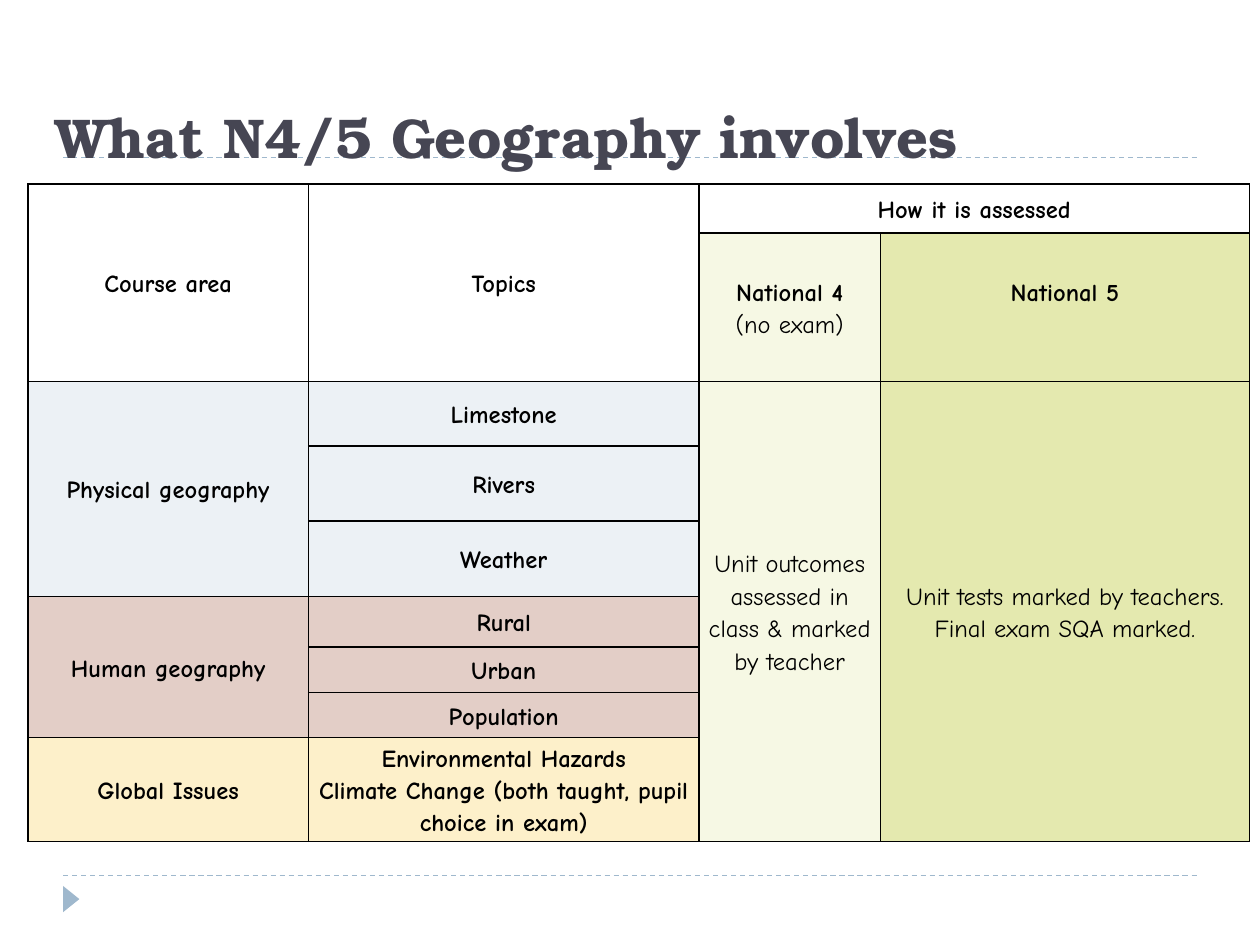
from lxml import etree
from pptx import Presentation
from pptx import util as u
from pptx.dml.color import RGBColor
from pptx.enum import dml, shapes, text
from pptx.oxml import ns

COLOURS = {
    "title": "464653", "text": "000000", "border": "000000", "accent": "9FB8CD",
    "header": "FFFFFF", "national 4": "F6F8E4", "national 5": "E4E9AF",
    "physical": "ECF1F5", "human": "E3CEC7", "global": "FDF0CA",
}
TITLE_FONT = {"name": "TeX Gyre Bonum", "size": u.Pt(32), "bold": True}
CELL_FONT = {"name": "Comic Neue", "size": u.Pt(14)}
CELL_FORMAT = {
    "vertical_anchor": text.MSO_ANCHOR.MIDDLE,
    "margin_left": u.Cm(0.18), "margin_right": u.Cm(0.18),
    "margin_top": 0, "margin_bottom": 0,
}
PARAGRAPH_FORMAT = {"alignment": text.PP_ALIGN.CENTER, "line_spacing": 1.15}

COLUMN_WIDTHS = [5.66, 7.87, 3.66, 7.44]
ROW_HEIGHTS = [0.99, 2.99, 1.3, 1.51, 1.52, 1.02, 0.92, 0.91, 2.09]

# Row, column, row span, column span, colour, [(paragraph, bold), ...]
CELLS = [
    (0, 0, 2, 1, "header", [("Course area", True)]),
    (0, 1, 2, 1, "header", [("Topics", True)]),
    (0, 2, 1, 2, "header", [("How it is assessed", True)]),
    (1, 2, 1, 1, "national 4", [("National 4", True), ("(no exam)", False)]),
    (1, 3, 1, 1, "national 5", [("National 5", True)]),
    (2, 2, 7, 1, "national 4",
     [("Unit outcomes assessed in class & marked by teacher", False)]),
    (2, 3, 7, 1, "national 5",
     [("Unit tests marked by teachers.", False), ("Final exam SQA marked.", False)]),
]
# Course area, colour, topics (one list of paragraphs for each row)
COURSE_AREAS = [
    ("Physical geography", "physical", [["Limestone"], ["Rivers"], ["Weather"]]),
    ("Human geography", "human", [["Rural"], ["Urban"], ["Population"]]),
    ("Global Issues", "global",
     [["Environmental Hazards",
       "Climate Change (both taught, pupil choice in exam)"]]),
]


def colour(name):
    return RGBColor.from_string(COLOURS[name])


def apply_format(target, values):
    for name, value in values.items():
        setattr(target, name, value)


class SlideBuilder:
    def __init__(self, slide):
        self.slide = slide

    def add_words(self, paragraph, words, font, colour_name):
        run = paragraph.add_run()
        run.text = words
        apply_format(run.font, font)
        run.font.color.rgb = colour(colour_name)

    def rule(self, top):
        line = self.slide.shapes.add_connector(
            shapes.MSO_CONNECTOR.STRAIGHT,
            u.Cm(1.27), u.Cm(top), u.Cm(24.13), u.Cm(top))
        line.line.color.rgb = colour("accent")
        apply_format(line.line, {"width": u.Pt(0.75),
                                 "dash_style": dml.MSO_LINE.DASH})
        etree.SubElement(line._element.spPr, ns.qn("a:effectLst"))

    def triangle(self, left, top, width, height):
        shape = self.slide.shapes.add_shape(
            shapes.MSO_SHAPE.ISOSCELES_TRIANGLE,
            u.Cm(left), u.Cm(top), u.Cm(width), u.Cm(height))
        shape.rotation = 90
        shape.shadow.inherit = False
        shape.fill.solid()
        shape.fill.fore_color.rgb = colour("accent")
        shape.line.fill.background()

    def title(self, words, left, top, width, height):
        frame = self.slide.shapes.add_textbox(
            u.Cm(left), u.Cm(top), u.Cm(width), u.Cm(height)).text_frame
        apply_format(frame, {"word_wrap": True,
                             "vertical_anchor": text.MSO_ANCHOR.BOTTOM})
        self.add_words(frame.paragraphs[0], words, TITLE_FONT, "title")

    def table(self, left, top, widths, heights):
        table = self.slide.shapes.add_table(
            len(heights), len(widths), u.Cm(left), u.Cm(top),
            u.Cm(sum(widths)), u.Cm(sum(heights))).table
        for column, width in zip(table.columns, widths):
            column.width = u.Cm(width)
        for row, height in zip(table.rows, heights):
            row.height = u.Cm(height)
        for cell in table.iter_cells():
            self.borders(cell)
        return table

    def borders(self, cell):
        properties = cell._tc.get_or_add_tcPr()
        for side in ("lnL", "lnR", "lnT", "lnB"):
            line = etree.SubElement(properties, ns.qn("a:" + side), w=str(u.Pt(1)))
            fill = etree.SubElement(line, ns.qn("a:solidFill"))
            etree.SubElement(fill, ns.qn("a:srgbClr"), val=COLOURS["border"])

    def cell(self, table, row, column, row_span, column_span, fill, paragraphs):
        cell = table.cell(row, column)
        if row_span * column_span > 1:
            cell.merge(table.cell(row + row_span - 1, column + column_span - 1))
        for r in range(row, row + row_span):
            for c in range(column, column + column_span):
                part = table.cell(r, c)
                part.fill.solid()
                part.fill.fore_color.rgb = colour(fill)
        apply_format(cell, CELL_FORMAT)
        frame = cell.text_frame
        for index, (words, bold) in enumerate(paragraphs):
            paragraph = frame.add_paragraph() if index else frame.paragraphs[0]
            apply_format(paragraph, PARAGRAPH_FORMAT)
            self.add_words(paragraph, words, {**CELL_FONT, "bold": bold}, "text")


def main():
    presentation = Presentation()
    apply_format(presentation, {"slide_width": u.Cm(25.4),
                                "slide_height": u.Cm(19.05)})
    builder = SlideBuilder(
        presentation.slides.add_slide(presentation.slide_layouts[6]))

    # Decoration and title
    for top in (17.65, 3.18):
        builder.rule(top)
    builder.triangle(1.17, 17.96, 0.53, 0.33)
    builder.title("What N4/5 Geography involves", 0.86, 0.64, 21.06, 2.9)

    # Headings and assessment columns
    table = builder.table(0.56, 3.71, COLUMN_WIDTHS, ROW_HEIGHTS)
    for cell in CELLS:
        builder.cell(table, *cell)
    # Lift "National 5" level with "National 4"
    table.cell(1, 3).margin_bottom = u.Cm(0.65)

    # Course areas with their topics
    row = 2
    for area, fill, topics in COURSE_AREAS:
        builder.cell(table, row, 0, len(topics), 1, fill, [(area, True)])
        for topic in topics:
            builder.cell(table, row, 1, 1, 1, fill,
                         [(words, True) for words in topic])
            row += 1

    presentation.save("out.pptx")


if __name__ == "__main__":
    main()
